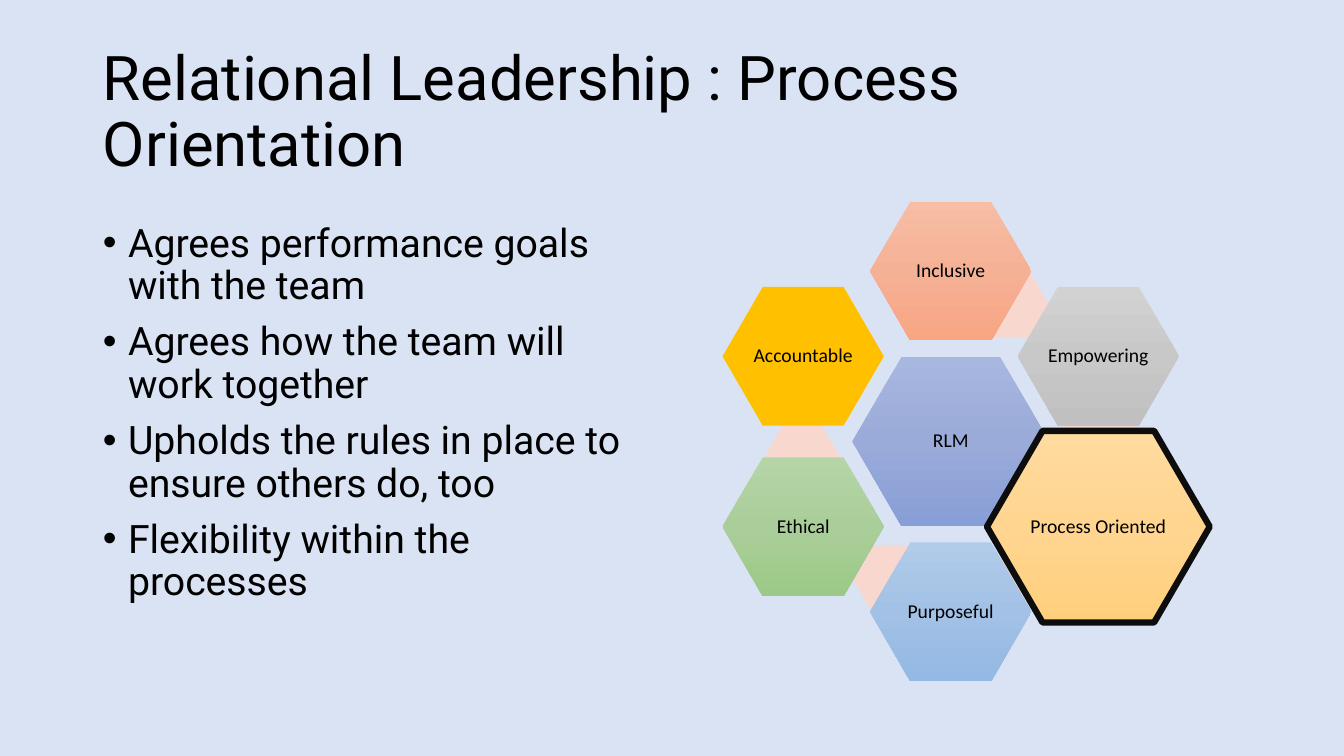
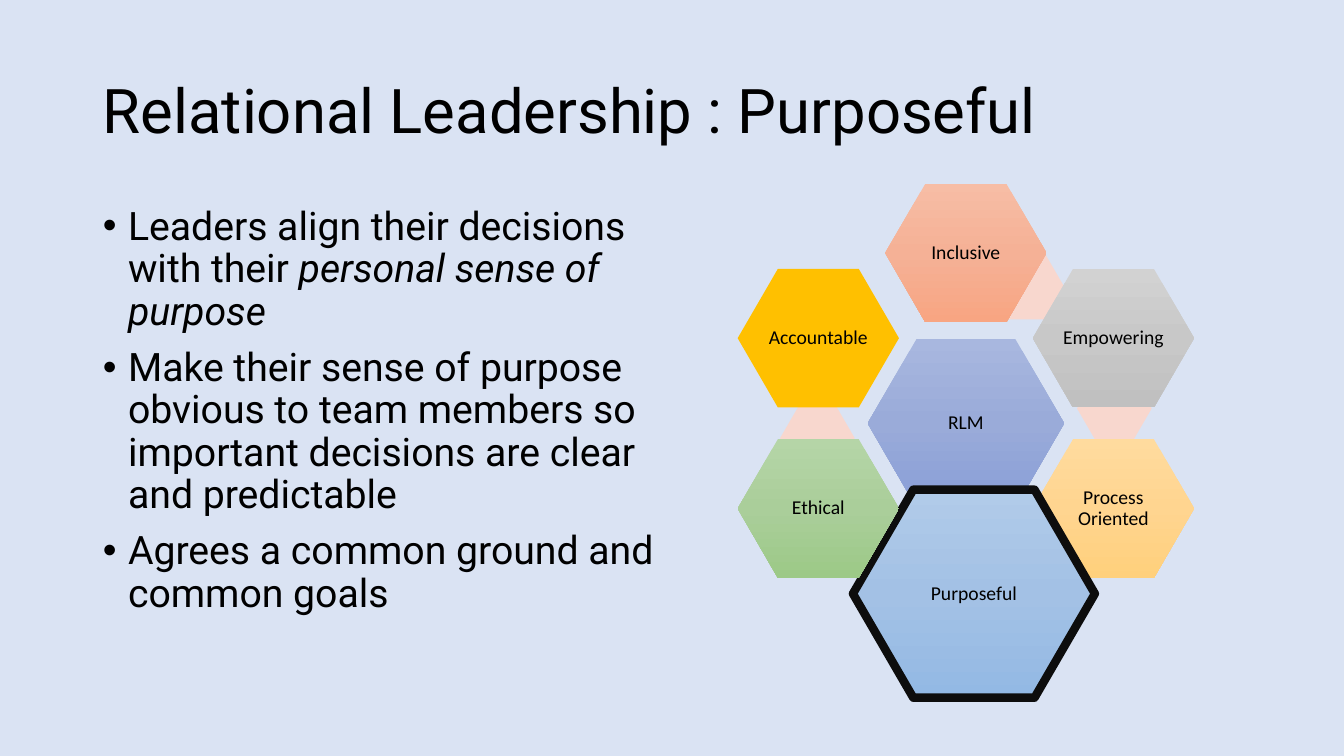
from copy import deepcopy
from math import cos, radians, sin

from pptx import Presentation
from pptx.dml.color import RGBColor
from pptx.enum import shapes, text
from pptx.oxml.ns import qn
from pptx.util import Inches, Pt

# Content: every bullet is a list of runs, and every second run is italic
SLIDES = [
    {
        "title": "Relational Leadership : Process Orientation",
        "bullets": [
            ["Agrees performance goals with the team"],
            ["Agrees how the team will work together"],
            ["Upholds the rules in place to ensure others do, too"],
            ["Flexibility within the processes"],
        ],
        "body": (0.92, 2, 5.67, 4.21),
        "anchor": text.MSO_ANCHOR.MIDDLE,
        "centre": (9.43, 4.38),
        "focus": {"name": "Process Oriented", "width": 2.21, "line": 4.5, "shift": 0},
    },
    {
        "title": "Relational Leadership : Purposeful",
        "bullets": [
            ["Leaders align their decisions with their ", "personal sense of purpose"],
            ["Make their sense of purpose obvious to team members so important "
             "decisions are clear and predictable"],
            ["Agrees a common ground and common goals"],
        ],
        "body": (0.92, 2, 5.67, 4.76),
        "anchor": text.MSO_ANCHOR.TOP,
        "centre": (9.58, 4.2),
        "focus": {"name": "Purposeful", "width": 2.4, "line": 6, "shift": 0.08},
    },
]

# Hexagon fills, clockwise from the top
CORE = ("RLM", ["A8B7DF", "9AABD9", "889ED7"])
PETALS = [
    ("Inclusive", ["F7BDA5", "F5B196", "F8A582"]),
    ("Empowering", ["D2D2D2", "C8C8C8", "C0C0C0"]),
    ("Process Oriented", ["FFDB9E", "FFD590", "FFD07C"]),
    ("Purposeful", ["B1CBE9", "A3C1E5", "93B9E4"]),
    ("Ethical", ["B5D5A7", "AACE9A", "9CC987"]),
    ("Accountable", ["FFC000"]),
]

# Shared style
BACKGROUND, INK, OUTLINE, LINK = "DAE3F3", "000000", "0D0D0D", "F8D7CE"
TITLE_BOX = (0.92, 0.4, 11.5, 1.45)
TITLE_FONT = {"name": "Roboto", "size": Pt(44)}
BODY_FONT = {"name": "Roboto", "size": Pt(28)}
LABEL_FONT = {"name": "Calibri", "size": Pt(14)}
CORE_WIDTH, PETAL_WIDTH, LINK_WIDTH = 1.95, 1.6, 0.74
HEIGHT_RATIO = 0.86
PETAL_RADIUS, PETAL_START = 1.69, -90
LINK_RADIUS, LINK_START = 1.48, -65.7


def colour(value):
    return RGBColor.from_string(value)


def assign(target, values):
    for name, value in values.items():
        setattr(target, name, value)


def place(shape, box):
    assign(shape, dict(zip(("left", "top", "width", "height"), map(Inches, box))))


def write(paragraph, runs, font, **layout):
    assign(paragraph, {"line_spacing": 0.9, **layout})
    for index, words in enumerate(runs):
        run = paragraph.add_run()
        run.text = words
        assign(run.font, {**font, "italic": index % 2 == 1})
        run.font.color.rgb = colour(INK)


def paint(shape, stops):
    if len(stops) == 1:
        shape.fill.solid()
        shape.fill.fore_color.rgb = colour(stops[0])
        return
    shape.fill.gradient()
    shape.fill.gradient_angle = 270
    stop_list = next(shape.element.spPr.iter(qn("a:gsLst")))
    stop_list.insert(1, deepcopy(stop_list[0]))
    for index, stop in enumerate(shape.fill.gradient_stops):
        stop.position = index / (len(stops) - 1)
        stop.color.rgb = colour(stops[index])


def add_hexagon(diagram, centre, width, stops, label=None, line=None):
    height = width * HEIGHT_RATIO
    hexagon = diagram.shapes.add_shape(shapes.MSO_SHAPE.HEXAGON, 0, 0, 0, 0)
    place(hexagon, (centre[0] - width / 2, centre[1] - height / 2, width, height))
    hexagon.adjustments[0] = 0.29
    hexagon.shadow.inherit = False
    paint(hexagon, stops)
    if line:
        hexagon.line.color.rgb = colour(OUTLINE)
        hexagon.line.width = Pt(line)
    else:
        hexagon.line.fill.background()
    if label:
        frame = hexagon.text_frame
        margins = ("margin_left", "margin_top", "margin_right", "margin_bottom")
        assign(frame, {**dict.fromkeys(margins, Inches(0.02)), "word_wrap": True,
                       "vertical_anchor": text.MSO_ANCHOR.MIDDLE})
        write(frame.paragraphs[0], [label], LABEL_FONT, alignment=text.PP_ALIGN.CENTER)


def on_ring(centre, radius, degrees):
    angle = radians(degrees)
    return centre[0] + radius * cos(angle), centre[1] + radius * sin(angle)


def add_model(slide, centre, focus):
    diagram = slide.shapes.add_group_shape()
    add_hexagon(diagram, centre, CORE_WIDTH, CORE[1], CORE[0])
    for index, (name, stops) in enumerate(PETALS):
        turn = index * 360 / len(PETALS)
        if index < len(PETALS) - 1:
            link = on_ring(centre, LINK_RADIUS, LINK_START + turn)
            add_hexagon(diagram, link, LINK_WIDTH, [LINK])
        x, y = on_ring(centre, PETAL_RADIUS, PETAL_START + turn)
        if name == focus["name"]:
            add_hexagon(diagram, (x + focus["shift"], y), focus["width"], stops,
                        name, focus["line"])
        else:
            add_hexagon(diagram, (x, y), PETAL_WIDTH, stops, name)


def add_bullets(body, content):
    place(body, content["body"])
    frame = body.text_frame
    assign(frame, {"vertical_anchor": content["anchor"], "word_wrap": True,
                   "auto_size": text.MSO_AUTO_SIZE.NONE})
    for index, runs in enumerate(content["bullets"]):
        paragraph = frame.add_paragraph() if index else frame.paragraphs[0]
        properties = paragraph._p.get_or_add_pPr()
        properties.set("marL", str(Inches(0.25)))
        properties.set("indent", str(-Inches(0.25)))
        write(paragraph, runs, BODY_FONT, space_before=Pt(10 if index else 0))


def main():
    presentation = Presentation()
    presentation.slide_width, presentation.slide_height = Inches(13.33), Inches(7.5)
    background = presentation.slide_master.background.fill
    background.solid()
    background.fore_color.rgb = colour(BACKGROUND)

    for content in SLIDES:
        slide = presentation.slides.add_slide(presentation.slide_layouts[1])
        title, body = slide.placeholders
        place(title, TITLE_BOX)
        assign(title.text_frame, {"vertical_anchor": text.MSO_ANCHOR.MIDDLE,
                                  "auto_size": text.MSO_AUTO_SIZE.NONE})
        write(title.text_frame.paragraphs[0], [content["title"]], TITLE_FONT,
              alignment=text.PP_ALIGN.LEFT)
        add_bullets(body, content)
        add_model(slide, content["centre"], content["focus"])

    presentation.save("out.pptx")


if __name__ == "__main__":
    main()
